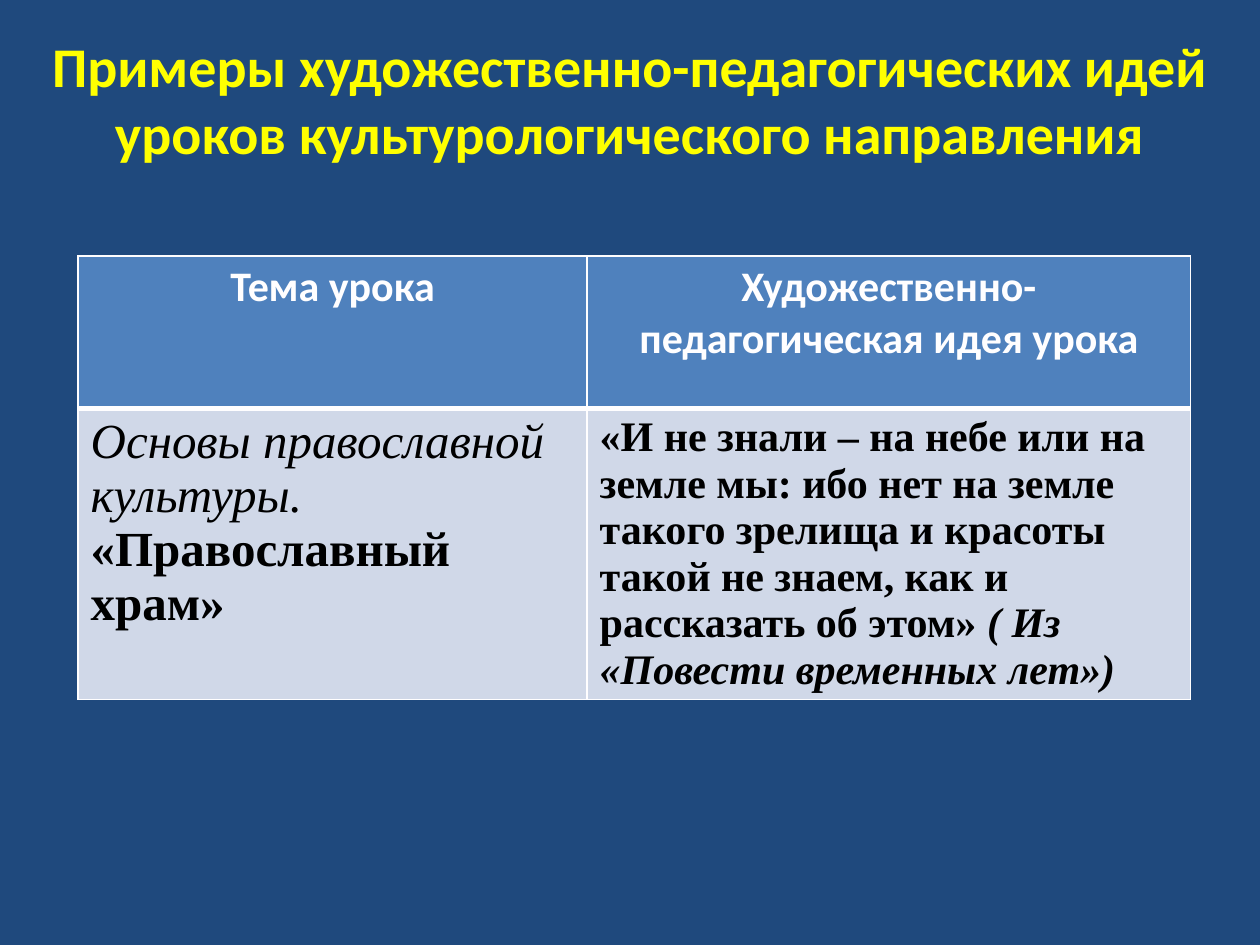
from lxml import etree
from pptx import Presentation
from pptx.dml.color import RGBColor
from pptx.enum.text import MSO_ANCHOR, PP_ALIGN
from pptx.oxml.ns import qn
from pptx.util import Inches, Pt

CENTER = PP_ALIGN.CENTER
LEFT = PP_ALIGN.LEFT
MIDDLE = MSO_ANCHOR.MIDDLE
TITLE_ONLY = 5

COLORS = {
    "background": "1F497D",
    "title": "FFFF00",
    "header": "4F81BD",
    "body": "D0D8E8",
    "light": "FFFEFF",
    "ink": "000000",
}
SANS = "Calibri"
SERIF = "Times New Roman"


def rgb(key):
    return RGBColor.from_string(COLORS[key])


def add_text(paragraph, text, size=24, font=SANS, color="light", bold=True, italic=False):
    run = paragraph.add_run()
    run.text = text
    run.font.size = Pt(size)
    run.font.name = font
    run.font.bold = bold
    run.font.italic = italic
    run.font.color.rgb = rgb(color)


class LessonSlide:
    """Holds the style and the current slide, with a method per element."""

    def __init__(self, presentation):
        self.slide = presentation.slides.add_slide(presentation.slide_layouts[TITLE_ONLY])
        fill = self.slide.background.fill
        fill.solid()
        fill.fore_color.rgb = rgb("background")

    def title(self, text, left, top, width, height):
        title = self.slide.shapes.title
        title.left, title.top = Inches(left), Inches(top)
        title.width, title.height = Inches(width), Inches(height)
        frame = title.text_frame
        frame.word_wrap = True
        frame.vertical_anchor = MIDDLE
        frame.paragraphs[0].alignment = CENTER
        add_text(frame.paragraphs[0], text, size=32, color="title")

    def borders(self, cell, bottom):
        properties = cell._tc.get_or_add_tcPr()
        widths = {"a:lnL": 1, "a:lnR": 1, "a:lnT": 1, "a:lnB": bottom}
        for position, (side, width) in enumerate(widths.items()):
            line = etree.Element(qn(side), w=str(Pt(width)))
            solid = etree.SubElement(line, qn("a:solidFill"))
            etree.SubElement(solid, qn("a:srgbClr"), val=COLORS["light"])
            properties.insert(position, line)

    def cell(self, cell, runs, fill, align, bottom):
        cell.fill.solid()
        cell.fill.fore_color.rgb = rgb(fill)
        self.borders(cell, bottom)
        paragraph = cell.text_frame.paragraphs[0]
        paragraph.alignment = align
        for text, style in runs:
            add_text(paragraph, text, **style)

    def table(self, rows, left, top, widths, heights):
        table = self.slide.shapes.add_table(
            len(heights), len(widths), Inches(left), Inches(top),
            Inches(sum(widths)), Inches(sum(heights))).table
        for column, width in zip(table.columns, widths):
            column.width = Inches(width)
        for row, height in zip(table.rows, heights):
            row.height = Inches(height)
        for index, contents in enumerate(rows):
            look = ("body", LEFT, 1) if index else ("header", CENTER, 3)
            for column, runs in enumerate(contents):
                self.cell(table.cell(index, column), runs, *look)


def main():
    presentation = Presentation()
    presentation.slide_width, presentation.slide_height = Inches(10), Inches(7.5)
    lesson = LessonSlide(presentation)
    lesson.title("Примеры художественно-педагогических идей уроков "
                 "культурологического направления", 0, 0, 10, 1.56)

    serif = {"font": SERIF, "color": "ink"}
    topic = {**serif, "size": 28}
    rows = [
        [[("Тема урока", {})],
         [("Художественно-педагогическая идея урока", {})]],
        [[("Основы православной культуры. ", {**topic, "bold": False, "italic": True}),
          ("«Православный храм»", topic)],
         [("«И не знали – на небе или на земле мы: ибо нет на земле такого зрелища "
           "и красоты такой не знаем, как и рассказать об этом» ", serif),
          ("( Из «Повести временных лет»)", {**serif, "italic": True})]],
    ]
    lesson.table(rows, 0.62, 2.03, widths=[4.04, 4.79], heights=[1.21, 2.31])
    presentation.save("out.pptx")


if __name__ == "__main__":
    main()
